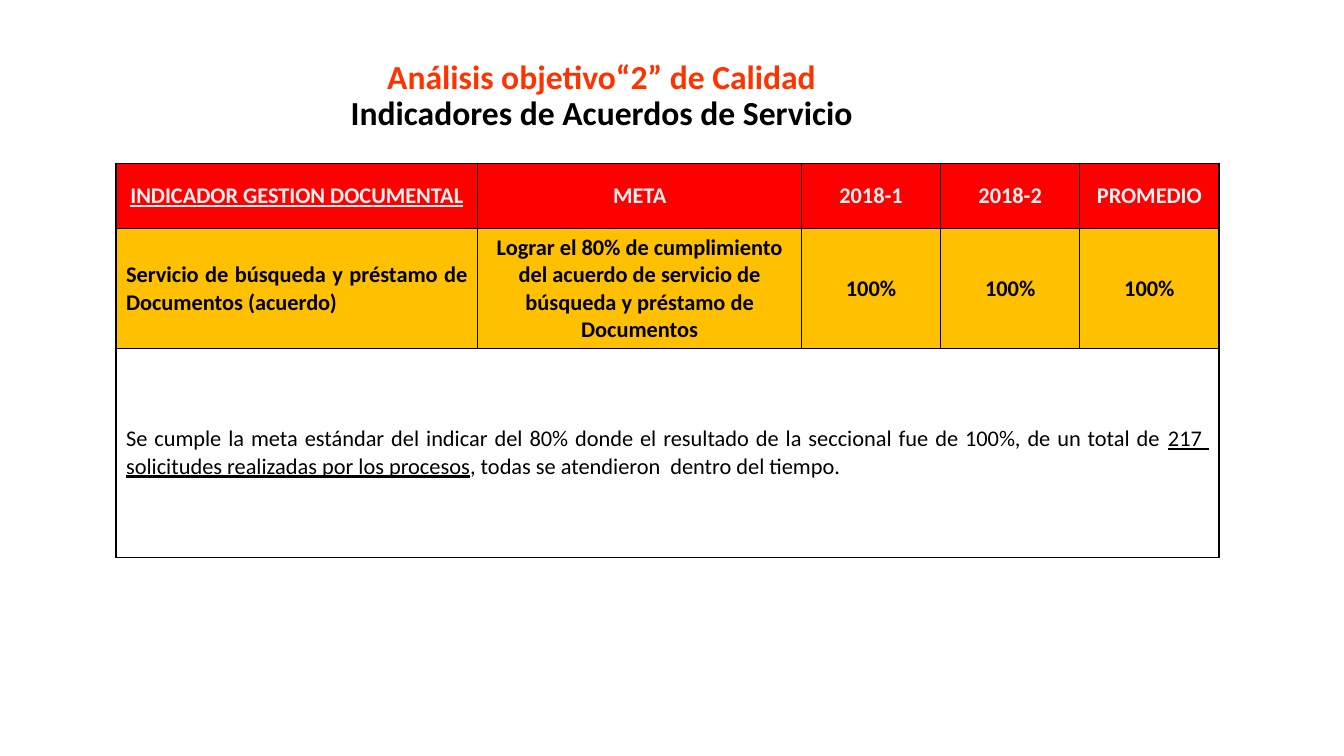
from dataclasses import dataclass

from lxml.etree import SubElement
from pptx import Presentation
from pptx.dml.color import RGBColor as Rgb
from pptx.enum.text import MSO_ANCHOR as Anchor, PP_ALIGN as Align
from pptx.oxml.ns import qn
from pptx.util import Inches, Pt

TITLE = [
    ("Análisis objetivo“2” de Calidad ", "FF3300"),
    ("Indicadores de Acuerdos de Servicio ", "000000"),
]
HEADERS = ["INDICADOR GESTION DOCUMENTAL", "META", "2018-1", "2018-2", "PROMEDIO"]
RESULTS = [
    "Servicio de búsqueda y préstamo de Documentos (acuerdo)",
    "Lograr el 80% de cumplimiento del acuerdo de servicio de búsqueda y préstamo de Documentos",
    "100%",
    "100%",
    "100%",
]
ANALYSIS = [
    ("Se cumple la meta estándar del indicar del 80% donde el resultado "
     "de la seccional fue de 100%, de un total de ", False),
    ("217  solicitudes realizadas por los procesos", True),
    (", todas se atendieron  dentro del tiempo.", False),
]
COLUMN_WIDTHS = [3.59, 3.21, 1.38, 1.38, 1.38]
ROW_HEIGHTS = [0.65, 1.18, 2.07]


@dataclass(frozen=True)
class Theme:
    font: str = "Calibri"
    title_size: int = 24
    table_size: int = 16
    header_text: str = "F2F2F2"
    text: str = "000000"
    header_fill: str = "FF0000"
    result_fill: str = "FFC000"
    analysis_fill: str = "FFFFFF"
    border: str = "000000"
    border_width: int = 1


THEME = Theme()


def add_text(para, text, size=THEME.table_size, color=THEME.text, bold=True, underline=False):
    span = para.add_run()
    span.text = text
    font = span.font
    font.name, font.size, font.bold, font.underline = THEME.font, Pt(size), bold, underline
    font.color.rgb = Rgb.from_string(color)


def format_cell(cell, fill):
    properties = cell._tc.get_or_add_tcPr()
    for side in ("a:lnL", "a:lnR", "a:lnT", "a:lnB"):
        line = SubElement(properties, qn(side), w=str(Pt(THEME.border_width)))
        SubElement(SubElement(line, qn("a:solidFill")), qn("a:srgbClr"), val=THEME.border)
    cell.fill.solid()
    cell.fill.fore_color.rgb = Rgb.from_string(fill)
    cell.vertical_anchor = Anchor.MIDDLE


def add_title(page):
    box = page.shapes.title
    box.left, box.top, box.width, box.height = map(Inches, (0.61, 0.68, 10.79, 0.69))
    box.text_frame.word_wrap = True
    box.text_frame.vertical_anchor = Anchor.BOTTOM
    para = box.text_frame.paragraphs[0]
    para.alignment, para.line_spacing = Align.CENTER, 0.9
    for index, (text, color) in enumerate(TITLE):
        if index:
            para.add_line_break()
        add_text(para, text, size=THEME.title_size, color=color)


def add_indicators(page):
    frame = page.shapes.add_table(
        len(ROW_HEIGHTS), len(COLUMN_WIDTHS), Inches(1.15), Inches(1.62),
        Inches(sum(COLUMN_WIDTHS)), Inches(sum(ROW_HEIGHTS)))
    table = frame.table
    table.first_row = table.horz_banding = False
    for column, width in zip(table.columns, COLUMN_WIDTHS):
        column.width = Inches(width)
    fills = (THEME.header_fill, THEME.result_fill, THEME.analysis_fill)
    for row, height, fill in zip(table.rows, ROW_HEIGHTS, fills):
        row.height = Inches(height)
        for cell in row.cells:
            format_cell(cell, fill)

    for index, (header, result) in enumerate(zip(HEADERS, RESULTS)):
        first = index == 0
        para = table.cell(0, index).text_frame.paragraphs[0]
        para.alignment = Align.CENTER
        add_text(para, header, color=THEME.header_text, underline=first)
        para = table.cell(1, index).text_frame.paragraphs[0]
        para.alignment = Align.JUSTIFY if first else Align.CENTER
        add_text(para, result)

    analysis = table.cell(2, 0)
    analysis.merge(table.cell(2, len(COLUMN_WIDTHS) - 1))
    para = analysis.text_frame.paragraphs[0]
    para.alignment = Align.JUSTIFY
    for text, underline in ANALYSIS:
        add_text(para, text, bold=False, underline=underline)


def main():
    """Build the slide of service agreement indicators."""
    deck = Presentation()
    deck.slide_width, deck.slide_height = Inches(13.33), Inches(7.5)
    page = deck.slides.add_slide(deck.slide_layouts[5])
    add_title(page)
    add_indicators(page)
    deck.save("out.pptx")


if __name__ == "__main__":
    main()
